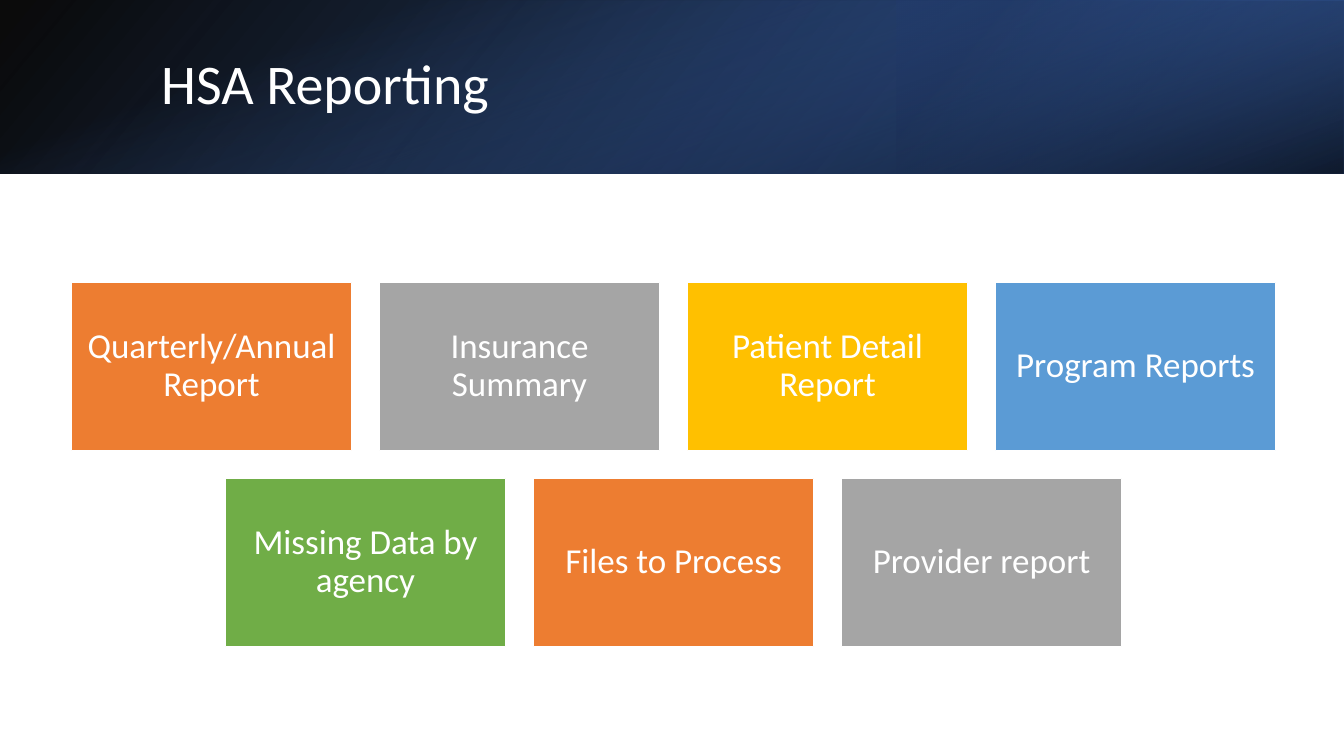
"""Build the HSA Reporting slide: a gradient banner above two centred rows of report cards."""
from lxml import etree
from pptx import Presentation
from pptx.dml.color import RGBColor
from pptx.enum.shapes import MSO_SHAPE
from pptx.enum.text import MSO_ANCHOR, PP_ALIGN
from pptx.oxml import parse_xml
from pptx.oxml.ns import nsdecls, qn
from pptx.util import Inches, Pt

RECTANGLE = MSO_SHAPE.RECTANGLE
MIDDLE = MSO_ANCHOR.MIDDLE
LEFT, CENTER = PP_ALIGN.LEFT, PP_ALIGN.CENTER

TITLE = "HSA Reporting"
TITLE_BOX = (1.5, 0.38, 10.98, 0.96)
WHITE = "FFFFFF"
FONT = "Calibri"
BANNER_LAYERS = [
    {"box": (0, 0, 13.33, 1.72), "rotation": 0, "flip": True, "angle": 140,
     "stops": [(0, "000000", 96), (100, "2F5597", 100)]},
    {"box": (8.89, 0, 4.44, 1.72), "rotation": 180, "flip": True, "angle": 320,
     "stops": [(19, "203864", 68), (100, "4472C4", 79)]},
    {"box": (5.8, -5.8, 1.72, 13.33), "rotation": 90, "flip": False, "angle": 340,
     "stops": [(23, "4472C4", 0), (99, "000000", 74)]},
]
REPORT_ROWS = [
    [("Quarterly/Annual Report", "ED7D31"), ("Insurance Summary", "A5A5A5"),
     ("Patient Detail Report", "FFC000"), ("Program Reports", "5B9BD5")],
    [("Missing Data by agency", "70AD47"), ("Files to Process", "ED7D31"),
     ("Provider report", "A5A5A5")],
]
CARD_WIDTH, CARD_HEIGHT, CARD_GAP = 2.78, 1.67, 0.275
ROWS_CENTER, ROWS_TOP = 6.68, 2.8


def color(value):
    return RGBColor.from_string(value)


def add_rectangle(slide, box):
    shape = slide.shapes.add_shape(RECTANGLE, *map(Inches, box))
    shape.shadow.inherit = False
    return shape


def set_gradient(shape, stops, angle):
    properties = shape._element.spPr
    gradient = parse_xml(f'<a:gradFill {nsdecls("a")} rotWithShape="1"><a:gsLst/></a:gradFill>')
    for position, value, opacity in stops:
        stop = etree.SubElement(gradient[0], qn("a:gs"), pos=str(position * 1000))
        stop_color = etree.SubElement(stop, qn("a:srgbClr"), val=value)
        etree.SubElement(stop_color, qn("a:alpha"), val=str(opacity * 1000))
    etree.SubElement(gradient, qn("a:lin"), ang=str(angle * 60000), scaled="0")
    properties.find(qn("a:prstGeom")).addnext(gradient)


def add_banner_layer(slide, layer):
    shape = add_rectangle(slide, layer["box"])
    shape.rotation = layer["rotation"]
    if layer["flip"]:
        shape._element.spPr.xfrm.set("flipH", "1")
    shape.line.fill.background()
    set_gradient(shape, layer["stops"], layer["angle"])


def write_text(shape, text, size, alignment, margin):
    frame = shape.text_frame
    frame_format = {"word_wrap": True, "vertical_anchor": MIDDLE,
                    "margin_left": Inches(margin), "margin_right": Inches(margin)}
    for name, value in frame_format.items():
        setattr(frame, name, value)
    paragraph = frame.paragraphs[0]
    paragraph.text = text
    paragraph.alignment = alignment
    paragraph.line_spacing = 0.9
    for name, value in {"name": FONT, "size": Pt(size)}.items():
        setattr(paragraph.runs[0].font, name, value)
    paragraph.runs[0].font.color.rgb = color(WHITE)


def add_card(slide, box, text, fill):
    card = add_rectangle(slide, box)
    card.fill.solid()
    card.fill.fore_color.rgb = color(fill)
    card.line.color.rgb = color(WHITE)
    card.line.width = Pt(1)
    write_text(card, text, 25, CENTER, 0.1)


def main():
    presentation = Presentation()
    presentation.slide_width, presentation.slide_height = Inches(13.33), Inches(7.5)
    slide = presentation.slides.add_slide(presentation.slide_layouts[6])
    for layer in BANNER_LAYERS:
        add_banner_layer(slide, layer)
    write_text(slide.shapes.add_textbox(*map(Inches, TITLE_BOX)), TITLE, 40, LEFT, 0.1)
    for row, reports in enumerate(REPORT_ROWS):
        row_width = len(reports) * (CARD_WIDTH + CARD_GAP) - CARD_GAP
        top = ROWS_TOP + row * (CARD_HEIGHT + CARD_GAP)
        for column, (text, fill) in enumerate(reports):
            left = ROWS_CENTER - row_width / 2 + column * (CARD_WIDTH + CARD_GAP)
            add_card(slide, (left, top, CARD_WIDTH, CARD_HEIGHT), text, fill)
    presentation.save("out.pptx")


if __name__ == "__main__":
    main()
